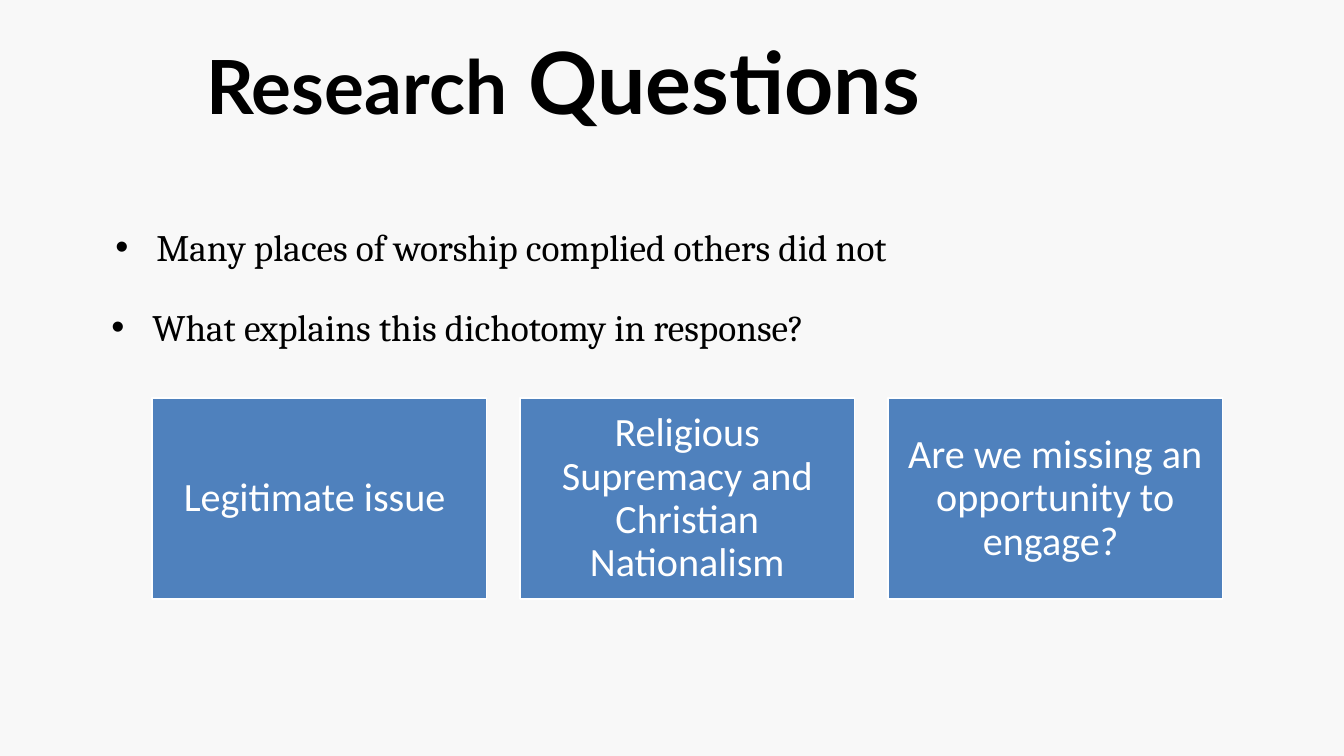
from dataclasses import dataclass

from lxml.etree import SubElement
from pptx import Presentation
from pptx.dml.color import RGBColor
from pptx.enum.shapes import MSO_SHAPE
from pptx.enum.text import MSO_ANCHOR, MSO_AUTO_SIZE, PP_ALIGN
from pptx.oxml.ns import qn
from pptx.util import Cm, Pt


@dataclass(frozen=True)
class Theme:
    background: str = "F8F8F8"
    ink: str = "000000"
    card: str = "4F81BD"
    white: str = "FFFFFF"
    title_font: str = "Lato"
    body_font: str = "Cambria"
    card_font: str = "Calibri"
    title_size: int = 92
    title_small: int = 80
    body_size: int = 40
    card_size: int = 43


def add_text(para, text, *, font, size, color, bold=False):
    span = para.add_run()
    span.text = text
    span.font.name = font
    span.font.size = Pt(size)
    span.font.bold = bold
    span.font.color.rgb = RGBColor.from_string(color)


def set_frame(frame, *, inset=0, left_inset=None, anchor=MSO_ANCHOR.TOP,
              auto_size=MSO_AUTO_SIZE.SHAPE_TO_FIT_TEXT):
    frame.word_wrap = True
    frame.auto_size = auto_size
    frame.vertical_anchor = anchor
    frame.margin_top = frame.margin_right = frame.margin_bottom = Cm(inset)
    frame.margin_left = Cm(inset if left_inset is None else left_inset)


def add_bullet(para, indent, hanging):
    properties = para._p.get_or_add_pPr()
    properties.set("marL", str(Cm(indent)))
    properties.set("indent", str(-Cm(hanging)))
    SubElement(properties, qn("a:buFont")).set("typeface", "Arial")
    SubElement(properties, qn("a:buChar")).set("char", "•")


class SlideBuilder:
    def __init__(self, page, theme):
        self.page = page
        self.theme = theme
        fill = page.background.fill
        fill.solid()
        fill.fore_color.rgb = RGBColor.from_string(theme.background)

    def title(self, spans, left, top, width, height):
        """Fill the title from (text, size) pairs."""
        box = self.page.shapes.title
        box.left, box.top, box.width, box.height = map(Cm, (left, top, width, height))
        set_frame(box.text_frame, left_inset=0.7)
        para = box.text_frame.paragraphs[0]
        para.alignment = PP_ALIGN.CENTER
        para.line_spacing = Pt(128.8)
        for text, size in spans:
            add_text(para, text, font=self.theme.title_font, size=size,
                     color=self.theme.ink, bold=True)

    def bullet(self, text, left, top, width, height):
        box = self.page.shapes.add_textbox(*map(Cm, (left, top, width, height)))
        set_frame(box.text_frame)
        para = box.text_frame.paragraphs[0]
        para.line_spacing = Pt(72.8)
        add_bullet(para, indent=3.12, hanging=1.55)
        add_text(para, text, font=self.theme.body_font,
                 size=self.theme.body_size, color=self.theme.ink)

    def card(self, text, left, top, width, height):
        box = self.page.shapes.add_shape(
            MSO_SHAPE.RECTANGLE, *map(Cm, (left, top, width, height)))
        box.shadow.inherit = False
        box.fill.solid()
        box.fill.fore_color.rgb = RGBColor.from_string(self.theme.card)
        box.line.color.rgb = RGBColor.from_string(self.theme.white)
        box.line.width = Pt(2)
        set_frame(box.text_frame, inset=0.46, anchor=MSO_ANCHOR.MIDDLE,
                  auto_size=MSO_AUTO_SIZE.NONE)
        para = box.text_frame.paragraphs[0]
        para.alignment = PP_ALIGN.CENTER
        para.line_spacing = 0.9
        add_text(para, text, font=self.theme.card_font,
                 size=self.theme.card_size, color=self.theme.white)


def main():
    deck = Presentation()
    deck.slide_width, deck.slide_height = Cm(50.8), Cm(28.58)
    theme = Theme()
    slide = SlideBuilder(deck.slides.add_slide(deck.slide_layouts[5]), theme)

    slide.title([("Research", theme.title_small), (" Questions", theme.title_size)],
                left=0, top=0.43, width=41.88, height=4.34)
    slide.bullet("Many places of worship complied others did not",
                 left=2.79, top=7.6, width=46.33, height=2.31)
    slide.bullet("What explains this dichotomy in response?",
                 left=2.64, top=10.62, width=41.45, height=2.31)

    card_width, card_gap = 12.65, 1.26
    answers = ["Legitimate issue ",
               "Religious Supremacy and Christian Nationalism",
               "Are we missing an opportunity to engage? "]
    for column, answer in enumerate(answers):
        slide.card(answer, left=5.74 + column * (card_width + card_gap),
                   top=15.06, width=card_width, height=7.59)

    deck.save("out.pptx")


if __name__ == "__main__":
    main()
